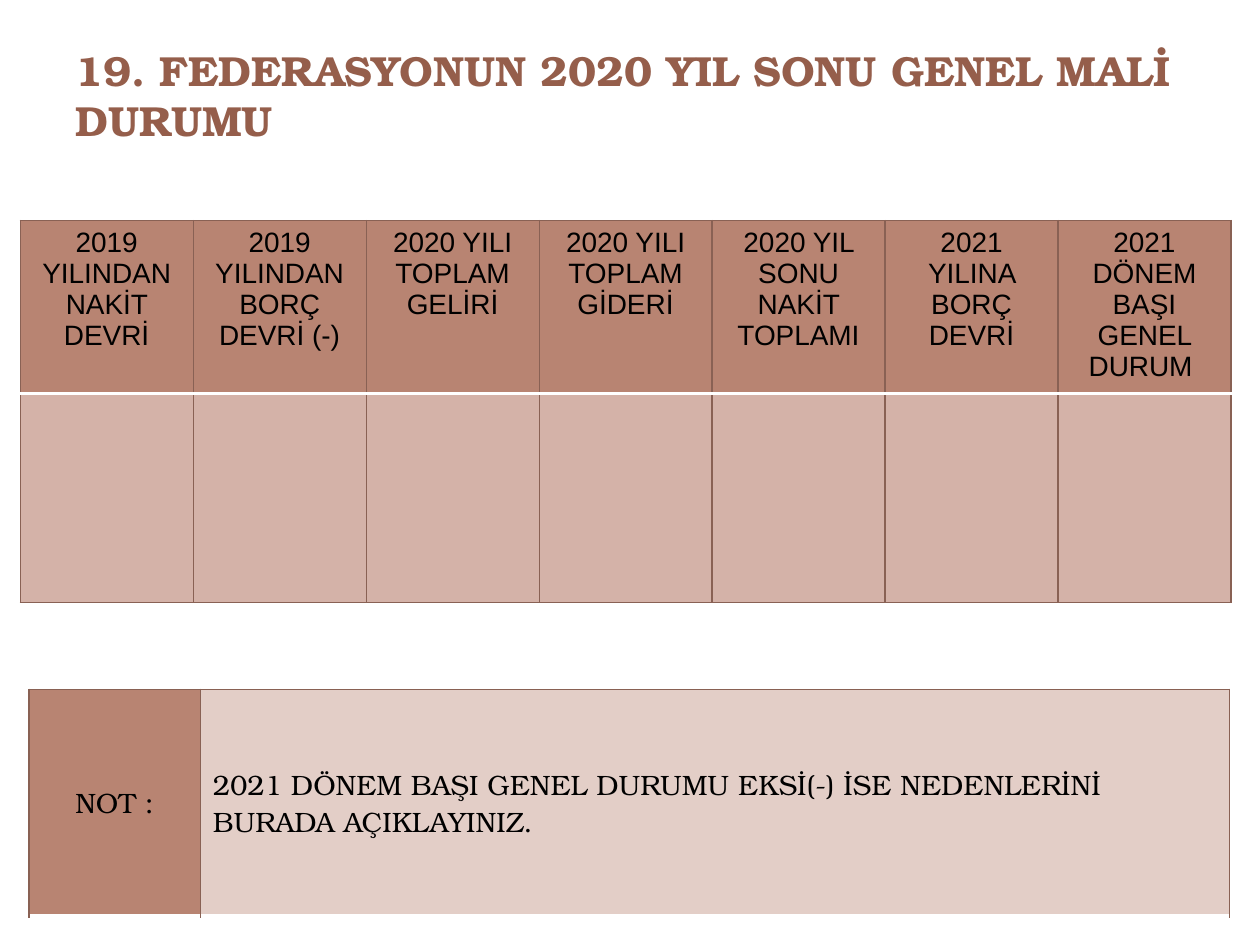
from lxml import etree
from pptx import Presentation
from pptx import util as u
from pptx.dml.color import RGBColor
from pptx.enum import text
from pptx.oxml import ns

TITLE_BROWN = RGBColor(0x95, 0x5E, 0x4B)
BORDER = RGBColor(0x89, 0x61, 0x54)
HEADER = RGBColor(0xB8, 0x84, 0x72)
BODY = RGBColor(0xD4, 0xB2, 0xA8)
NOTE = RGBColor(0xE3, 0xCE, 0xC7)
BLACK = RGBColor(0, 0, 0)
WHITE = RGBColor(0xFF, 0xFF, 0xFF)
SERIF = "TeX Gyre Bonum"
THIN, THICK = (BORDER, 0.75), (WHITE, 2)


def write(frame, content, font, size=16, color=BLACK, bold=False, align=text.PP_ALIGN.LEFT):
    frame.text = content
    for para in frame.paragraphs:
        para.alignment = align
        for span in para.runs:
            span.font.name = font
            span.font.size = u.Pt(size)
            span.font.bold = bold
            span.font.color.rgb = color


def paint(cell, color, top=THIN, bottom=THIN):
    properties = cell._tc.get_or_add_tcPr()
    for side, (line_color, width) in zip("LRTB", (THIN, THIN, top, bottom)):
        line = etree.SubElement(properties, ns.qn("a:ln" + side), w=str(u.Pt(width)))
        solid = etree.SubElement(line, ns.qn("a:solidFill"))
        etree.SubElement(solid, ns.qn("a:srgbClr"), val=str(line_color))
    cell.fill.solid()
    cell.fill.fore_color.rgb = color


deck = Presentation()
deck.slide_width, deck.slide_height = u.Inches(10), u.Inches(7.5)
page = deck.slides.add_slide(deck.slide_layouts[5])

title = page.shapes.title
title.left, title.top = u.Inches(0.5), u.Inches(0.3)
title.width, title.height = u.Inches(9), u.Inches(1.25)
write(title.text_frame, "19. FEDERASYONUN 2020 YIL SONU GENEL MALİ DURUMU",
      SERIF, size=24, color=TITLE_BROWN, bold=True)
title.text_frame.vertical_anchor = text.MSO_ANCHOR.TOP
title.text_frame.auto_size = text.MSO_AUTO_SIZE.NONE

headings = [
    "2019 YILINDAN NAKİT DEVRİ",
    "2019 YILINDAN BORÇ DEVRİ (-)",
    "2020 YILI TOPLAM GELİRİ",
    "2020 YILI TOPLAM GİDERİ",
    "2020 YIL SONU NAKİT TOPLAMI",
    "2021 YILINA BORÇ DEVRİ",
    "2021\nDÖNEM BAŞI GENEL DURUM ",
]
balance = page.shapes.add_table(2, len(headings), u.Inches(0.16), u.Inches(1.75),
                                u.Inches(9.61), u.Inches(3.03)).table
balance.rows[0].height, balance.rows[1].height = u.Inches(1.37), u.Inches(1.66)
for column, heading in enumerate(headings):
    header_cell = balance.cell(0, column)
    write(header_cell.text_frame, heading, "Arial", align=text.PP_ALIGN.CENTER)
    paint(header_cell, HEADER, bottom=THICK)
    paint(balance.cell(1, column), BODY, top=THICK)

notes = [
    ("NOT :", 1.36, HEADER, text.PP_ALIGN.CENTER),
    ("2021 DÖNEM BAŞI GENEL DURUMU EKSİ(-) İSE NEDENLERİNİ BURADA AÇIKLAYINIZ.",
     8.17, NOTE, text.PP_ALIGN.LEFT),
]
note_table = page.shapes.add_table(1, len(notes), u.Inches(0.23), u.Inches(5.47),
                                   u.Inches(9.53), u.Inches(1.8)).table
for column, (content, width, color, align) in enumerate(notes):
    note_table.columns[column].width = u.Inches(width)
    note_cell = note_table.cell(0, column)
    note_cell.vertical_anchor = text.MSO_ANCHOR.MIDDLE
    write(note_cell.text_frame, content, SERIF, align=align)
    paint(note_cell, color, bottom=THICK)

deck.save("out.pptx")
